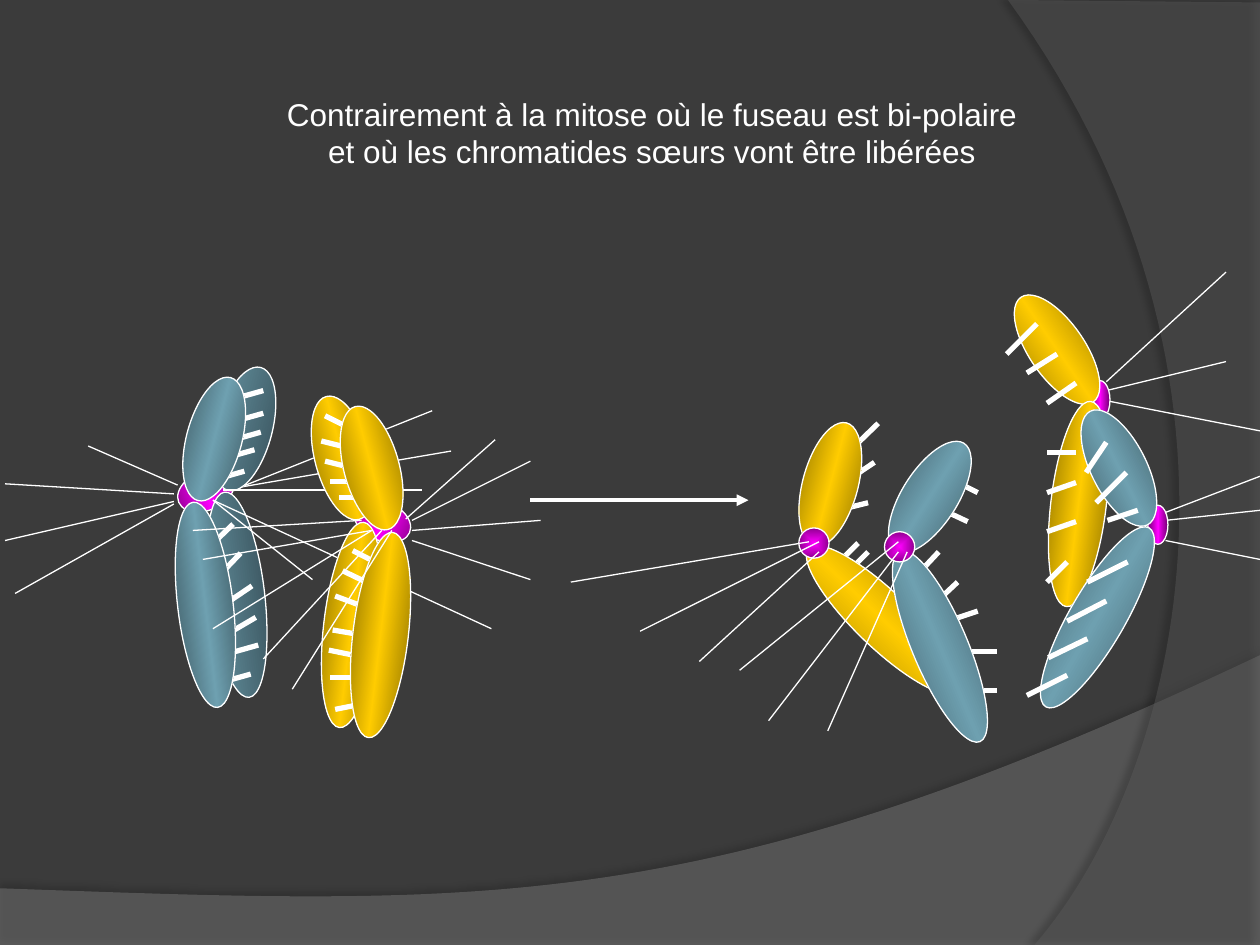
"""Slide comparing a tetrad's spindle with the bipolar spindle of mitosis."""
from lxml.etree import SubElement
from pptx import Presentation
from pptx.dml.color import RGBColor
from pptx.enum.shapes import MSO_CONNECTOR, MSO_SHAPE
from pptx.enum.text import MSO_ANCHOR, MSO_AUTO_SIZE, PP_ALIGN
from pptx.oxml import parse_xml
from pptx.oxml.ns import nsdecls, qn
from pptx.util import Inches, Pt

COLORS = {
    "bg": "3B3B3B", "white": "FFFFFF", "wave": "7F7F7F", "arc": "5E5E5E",
    "blue": "6EA0B0", "blue_dark": "324850", "gold": "FFCC00", "gold_dark": "735C00",
    "pink": "FF00FF", "pink_dark": "730073", "pink_deep": "8F008F",
}
SHORT, LONG = (0.44, 1.01), (0.44, 1.64)
PLATE, SIDE_PLATE, BALL = (0.47, 0.31), (0.16, 0.31), (0.24, 0.24)
BLUE = ("blue_dark", "blue", "blue_dark")
BLUE_FADE = ("blue", "blue_dark")
GOLD = ("gold_dark", "gold", "gold_dark")
PINK = ("pink_dark", "pink", "pink_dark")
PINK_BALL = ("pink", "pink_deep")


def rgb(name):
    return RGBColor.from_string(COLORS[name])


def write(tf, text, font="Arial", size=18, color="white", align=PP_ALIGN.CENTER):
    for i, line in enumerate(text.split("\n")):
        p = tf.paragraphs[0] if i == 0 else tf.add_paragraph()
        p.alignment = align
        r = p.add_run()
        r.text = line
        r.font.name, r.font.size = font, Pt(size)
        r.font.color.rgb = rgb(color)


def bezier(p0, p1, p2, p3, steps=60):
    for i in range(steps + 1):
        t = i / steps
        weights = ((1 - t) ** 3, 3 * t * (1 - t) ** 2, 3 * t * t * (1 - t), t ** 3)
        yield tuple(sum(w * p[k] for w, p in zip(weights, (p0, p1, p2, p3))) for k in (0, 1))


class Board:
    def __init__(self, slide):
        self.slide = slide
        self.shapes = slide.shapes
        slide.background.fill.solid()
        slide.background.fill.fore_color.rgb = rgb("bg")

    def group(self):
        self.shapes = self.slide.shapes.add_group_shape().shapes

    def title(self, text, x, y, w, h):
        sp = self.slide.shapes.title
        sp.left, sp.top, sp.width, sp.height = map(Inches, (x, y, w, h))
        tf = sp.text_frame
        tf.word_wrap = True
        tf.vertical_anchor = MSO_ANCHOR.TOP
        tf.auto_size = MSO_AUTO_SIZE.SHAPE_TO_FIT_TEXT
        write(tf, text)
        sp.element.getparent().append(sp.element)

    def panel(self, points, color, opacity, shadow_opacity, distance, direction):
        fb = self.shapes.build_freeform(*map(Inches, points[0]), scale=1.0)
        fb.add_line_segments([tuple(map(Inches, pt)) for pt in points[1:]])
        sp = fb.convert_to_shape()
        sp.fill.solid()
        sp.fill.fore_color.rgb = rgb(color)
        sp.line.fill.background()
        sp.shadow.inherit = False
        pr = sp.element.spPr
        SubElement(pr.find(".//" + qn("a:srgbClr")), qn("a:alpha"), val=str(opacity * 1000))
        pr.find(qn("a:effectLst")).append(parse_xml(
            f'<a:outerShdw {nsdecls("a")} blurRad="{Pt(4)}" dist="{Pt(distance)}" '
            f'dir="{direction * 60000}" algn="ctr" rotWithShape="0"><a:srgbClr val="000000">'
            f'<a:alpha val="{shadow_opacity * 1000}"/></a:srgbClr></a:outerShdw>'))

    def oval(self, x, y, size, colors, rotation=0, radial=False):
        sp = self.shapes.add_shape(MSO_SHAPE.OVAL, *map(Inches, (x, y, *size)))
        sp.rotation = rotation
        sp.shadow.inherit = False
        sp.line.color.rgb, sp.line.width = rgb("white"), Pt(0.75)
        sp.fill.gradient()
        stops = "".join(
            f'<a:gs pos="{100000 * i // (len(colors) - 1)}"><a:srgbClr val="{COLORS[c]}"/></a:gs>'
            for i, c in enumerate(colors))
        shade = ('<a:path path="shape"><a:fillToRect l="50000" t="50000" r="50000" b="50000"/>'
                 '</a:path>' if radial else '<a:lin ang="0" scaled="1"/>')
        pr = sp.element.spPr
        pr.replace(pr.find(qn("a:gradFill")), parse_xml(
            f'<a:gradFill {nsdecls("a")} rotWithShape="1"><a:gsLst>{stops}</a:gsLst>'
            f'{shade}</a:gradFill>'))

    def line(self, x1, y1, x2, y2, width=0.75, arrow=False):
        cx = self.shapes.add_connector(MSO_CONNECTOR.STRAIGHT, *map(Inches, (x1, y1, x2, y2)))
        cx.line.color.rgb, cx.line.width = rgb("white"), Pt(width)
        pr = cx._element.spPr
        if arrow:
            SubElement(pr.find(qn("a:ln")), qn("a:tailEnd"), type="triangle")
        SubElement(pr, qn("a:effectLst"))

    def fibres(self, *ends):
        for end in ends:
            self.line(*end)

    def genes(self, *ends):
        for end in ends:
            self.line(*end, width=3)


def draw_background(b):
    b.panel([(0, 7.05), (0, 7.51), (10, 7.51),
             *bezier((10, 5.2), (5.59, 7.29), (3.91, 7.19), (0, 7.05))],
            "wave", 45, 35, 3.5, 270)
    b.panel([(10, 0.02), (10, 7.5),
             *bezier((8.21, 7.5), (9.35, 6.19), (10.18, 3), (8, 0)), (10, 0.02)],
            "arc", 40, 45, 4, 180)


def draw_tetrad(b):
    b.group()
    b.fibres((1.77, 3.89, 3.58, 3.58), (1.85, 3.89, 3.43, 3.26))
    b.oval(1.4, 3.74, PLATE, PINK, 336.9)
    b.oval(1.72, 2.9, SHORT, BLUE_FADE, 14.9)
    b.oval(1.66, 3.9, LONG, BLUE_FADE, 353.2)
    b.genes((1.85, 4.16, 1.61, 4.39), (1.91, 4.39, 1.68, 4.63), (2, 4.65, 1.72, 4.84),
            (2.03, 4.9, 1.74, 5.07), (2.05, 5.12, 1.73, 5.21), (1.99, 5.35, 1.67, 5.44))
    b.genes(*((x, y, x - 0.32, y + 0.09) for x, y in
              ((2.09, 3.1), (2.09, 3.28), (2.07, 3.43), (2.02, 3.57), (1.94, 3.74))))
    b.oval(1.48, 2.98, SHORT, BLUE, 14.9)
    b.oval(1.41, 3.98, LONG, BLUE, 353.2)
    b.fibres((1.38, 4, 0.12, 4.71), (1.41, 3.85, 0.7, 3.54), (1.38, 3.92, 0.04, 3.84),
             (1.38, 3.98, 0.04, 4.29), (1.69, 3.97, 3.9, 4.99), (1.77, 3.89, 3.35, 3.89),
             (1.69, 3.97, 2.48, 4.6))
    b.oval(2.8, 3.98, PLATE, PINK, 23.1)
    b.oval(2.5, 3.13, SHORT, GOLD, 345.1)
    b.oval(2.57, 4.14, LONG, GOLD, 6.8)
    b.genes((2.58, 3.3, 2.9, 3.46), (2.55, 3.5, 2.87, 3.58), (2.69, 3.95, 3, 3.95),
            (2.58, 3.66, 2.9, 3.74), (2.62, 3.82, 2.93, 3.82), (2.8, 4.37, 3.11, 4.53),
            (2.72, 4.53, 3.03, 4.68), (2.66, 4.73, 3.06, 4.88), (2.64, 5, 3.11, 5.08),
            (2.62, 5.38, 3.1, 5.38), (2.61, 5.16, 3, 5.24), (2.66, 5.63, 3.06, 5.55))
    b.oval(2.73, 3.21, SHORT, GOLD, 345.1)
    b.oval(2.8, 4.22, LONG, GOLD, 6.8)
    b.fibres((3.27, 4.13, 4.21, 3.66), (3.22, 4.12, 3.93, 3.49), (3.27, 4.21, 4.29, 4.13),
             (3.27, 4.29, 4.21, 4.6), (3.03, 4.21, 2.09, 5.23), (2.95, 4.21, 1.61, 4.44),
             (3.11, 4.21, 2.32, 5.47), (2.87, 4.13, 1.53, 4.21), (2.95, 4.21, 1.69, 4.99))


def draw_separation(b):
    b.group()
    b.fibres((8.78, 3.03, 9.73, 2.16), (8.78, 3.1, 9.73, 2.87), (8.78, 3.18, 10, 3.42),
             (9.25, 4.13, 10, 4.05), (9.25, 4.29, 10, 4.44), (9.19, 4.09, 10, 3.78))
    b.oval(8.65, 3.02, SIDE_PLATE, PINK)
    b.oval(9.11, 4.01, SIDE_PLATE, PINK)
    b.oval(8.17, 2.27, SHORT, GOLD, 325.4)
    b.oval(8.34, 3.18, LONG, GOLD, 6.8)
    b.oval(8.66, 3.21, SHORT, BLUE, 333.3)
    b.oval(8.49, 4.08, LONG, BLUE, 30)
    b.genes((8.23, 2.57, 7.99, 2.81), (8.39, 2.81, 8.15, 2.96), (8.54, 3.04, 8.31, 3.2),
            (8.54, 3.59, 8.31, 3.59), (8.54, 3.83, 8.31, 3.91), (8.54, 4.14, 8.31, 4.22),
            (8.47, 4.46, 8.31, 4.62), (8.78, 3.51, 8.62, 3.75), (8.94, 3.75, 8.7, 3.99),
            (9.03, 4.05, 8.79, 4.13), (8.95, 4.46, 8.63, 4.62), (8.78, 4.77, 8.47, 4.93),
            (8.63, 5.07, 8.32, 5.22), (8.47, 5.36, 8.15, 5.52),
            (6.65, 4.47, 6.81, 4.31), (6.73, 4.54, 6.89, 4.38))
    b.oval(6.79, 4.1, LONG, GOLD, 313.9)
    b.genes((7.6, 3.83, 7.76, 3.91), (7.36, 3.99, 7.68, 4.14), (6.65, 3.67, 6.97, 3.36),
            (6.7, 3.83, 6.94, 3.67), (6.57, 4.07, 6.89, 3.99), (7.3, 4.54, 7.45, 4.38),
            (7.44, 4.77, 7.6, 4.62), (7.52, 4.93, 7.76, 4.85), (7.6, 5.17, 7.91, 5.17),
            (7.68, 5.48, 7.91, 5.48))
    b.oval(7.24, 4.31, LONG, BLUE, 337.2)
    b.oval(6.37, 3.34, SHORT, GOLD, 14.9)
    b.oval(7.16, 3.44, SHORT, BLUE, 32.4)
    b.oval(6.34, 4.19, BALL, PINK_BALL, radial=True)
    b.oval(7.02, 4.22, BALL, PINK_BALL, radial=True)
    b.fibres((6.42, 4.3, 4.53, 4.62), (6.5, 4.3, 5.08, 5.01), (6.5, 4.38, 5.55, 5.25),
             (7.13, 4.3, 5.87, 5.32), (7.13, 4.38, 6.1, 5.72), (7.2, 4.38, 6.57, 5.8))
    b.line(4.21, 3.97, 5.94, 3.97, width=2.25, arrow=True)


def main():
    prs = Presentation()
    prs.slide_width, prs.slide_height = Inches(10), Inches(7.5)
    b = Board(prs.slides.add_slide(prs.slide_layouts[5]))
    draw_background(b)
    draw_tetrad(b)
    draw_separation(b)
    b.title("Contrairement à la mitose où le fuseau est bi-polaire\n"
            "et où les chromatides sœurs vont être libérées", 1.41, 0.7, 7.53, 0.71)
    prs.save("out.pptx")


if __name__ == "__main__":
    main()
